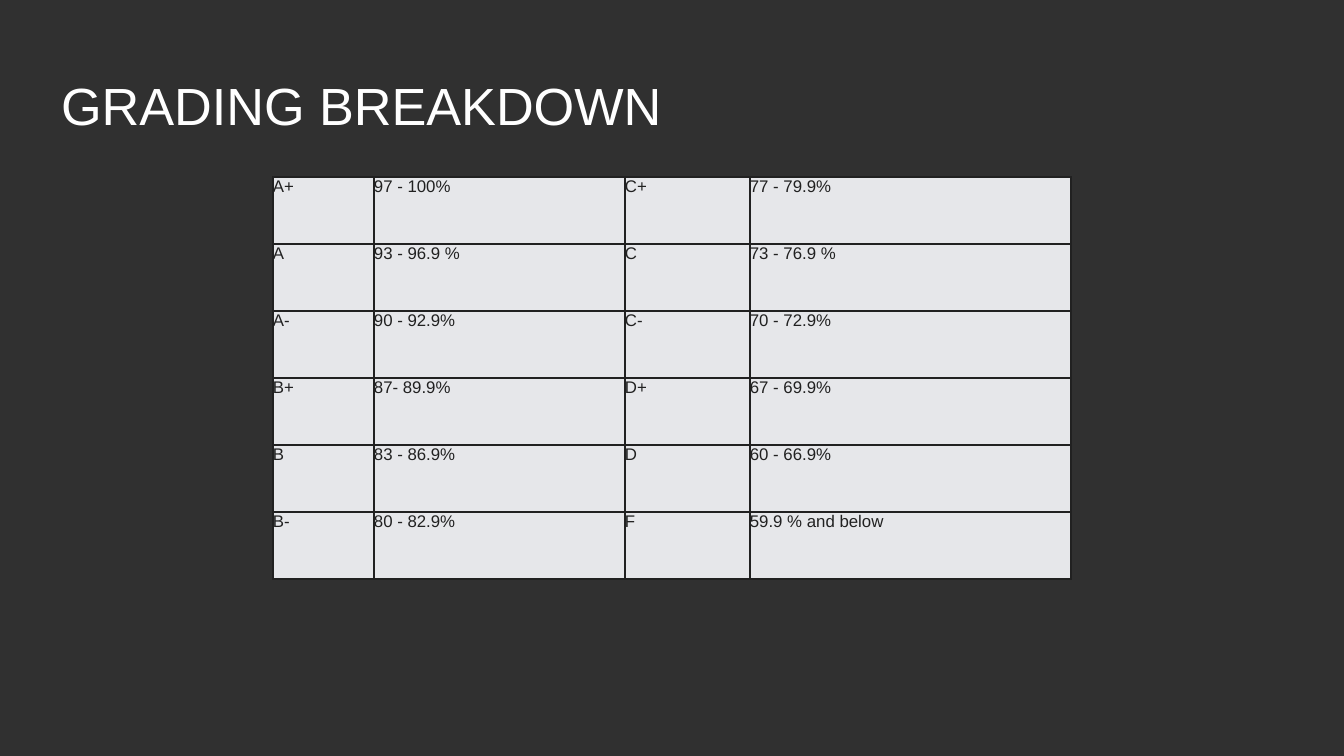
from dataclasses import dataclass

from lxml.etree import SubElement
from pptx import Presentation
from pptx.dml.color import RGBColor
from pptx.enum.text import MSO_ANCHOR, MSO_AUTO_SIZE, PP_ALIGN
from pptx.oxml.ns import qn
from pptx.slide import Slide
from pptx.table import _Cell
from pptx.text.text import TextFrame
from pptx.util import Emu, Pt

EMU_PER_PX = 914400 / 134.4


@dataclass(frozen=True)
class Theme:
    font: str = "Arial"
    background: str = "303030"
    title_color: str = "FFFFFF"
    ink: str = "212121"
    cell_fill: str = "E6E7EA"
    title_size: int = 28
    cell_size: int = 9
    border_width: int = 1


@dataclass(frozen=True)
class Box:
    left: int
    top: int
    width: int
    height: int


@dataclass(frozen=True)
class Grade:
    letter: str
    score: str


THEME = Theme()
TITLE_BOX = Box(51, 58, 907, 94)
TABLE_LEFT, TABLE_TOP = 273, 177
COLUMN_WIDTHS = (101, 251, 125, 321)
ROW_HEIGHT = 67

UPPER_GRADES = (
    Grade("A+", "97 - 100%"),
    Grade("A", "93 - 96.9 %"),
    Grade("A-", "90 - 92.9%"),
    Grade("B+", "87- 89.9%"),
    Grade("B", "83 - 86.9%"),
    Grade("B-", "80 - 82.9%"),
)
LOWER_GRADES = (
    Grade("C+", "77 - 79.9%"),
    Grade("C", "73 - 76.9 %"),
    Grade("C-", "70 - 72.9%"),
    Grade("D+", "67 - 69.9%"),
    Grade("D", "60 - 66.9%"),
    Grade("F", "59.9 % and below"),
)


def px(length: int) -> Emu:
    return Emu(round(length * EMU_PER_PX))


def write(frame: TextFrame, text: str, size: int, color: str) -> None:
    frame.text = text
    paragraph = frame.paragraphs[0]
    paragraph.alignment = PP_ALIGN.LEFT
    font = paragraph.runs[0].font
    font.name = THEME.font
    font.size = Pt(size)
    font.color.rgb = RGBColor.from_string(color)


def add_borders(cell: _Cell) -> None:
    properties = cell._tc.get_or_add_tcPr()
    for side in ("a:lnL", "a:lnR", "a:lnT", "a:lnB"):
        line = SubElement(properties, qn(side), w=str(Pt(THEME.border_width)))
        fill = SubElement(line, qn("a:solidFill"))
        SubElement(fill, qn("a:srgbClr"), val=THEME.ink)


def draw_cell(cell: _Cell, text: str) -> None:
    cell.margin_left = cell.margin_right = 0
    cell.margin_top = cell.margin_bottom = 0
    add_borders(cell)
    cell.fill.solid()
    cell.fill.fore_color.rgb = RGBColor.from_string(THEME.cell_fill)
    write(cell.text_frame, text, THEME.cell_size, THEME.ink)


def draw_title(slide: Slide, text: str, box: Box) -> None:
    title = slide.shapes.title
    title.left, title.top = px(box.left), px(box.top)
    title.width, title.height = px(box.width), px(box.height)
    frame = title.text_frame
    frame.vertical_anchor = MSO_ANCHOR.MIDDLE
    frame.auto_size = MSO_AUTO_SIZE.NONE
    frame.margin_left = frame.margin_right = px(10)
    frame.margin_top = frame.margin_bottom = px(5)
    write(frame, text, THEME.title_size, THEME.title_color)


def draw_grades(slide: Slide) -> None:
    """Set the upper and lower halves of the scale side by side."""
    grade_rows = list(zip(UPPER_GRADES, LOWER_GRADES))
    table = slide.shapes.add_table(
        len(grade_rows), len(COLUMN_WIDTHS), px(TABLE_LEFT), px(TABLE_TOP),
        px(sum(COLUMN_WIDTHS)), px(ROW_HEIGHT * len(grade_rows)),
    ).table
    table.first_row = table.horz_banding = False
    for column, width in zip(table.columns, COLUMN_WIDTHS):
        column.width = px(width)
    for row, (upper, lower) in zip(table.rows, grade_rows):
        row.height = px(ROW_HEIGHT)
        texts = (upper.letter, upper.score, lower.letter, lower.score)
        for cell, text in zip(row.cells, texts):
            draw_cell(cell, text)


def main() -> None:
    presentation = Presentation()
    presentation.slide_width, presentation.slide_height = px(1344), px(756)
    title_only = presentation.slide_layouts[5]
    slide = presentation.slides.add_slide(title_only)
    background = slide.background.fill
    background.solid()
    background.fore_color.rgb = RGBColor.from_string(THEME.background)
    draw_title(slide, "GRADING BREAKDOWN", TITLE_BOX)
    draw_grades(slide)
    presentation.save("out.pptx")


if __name__ == "__main__":
    main()
